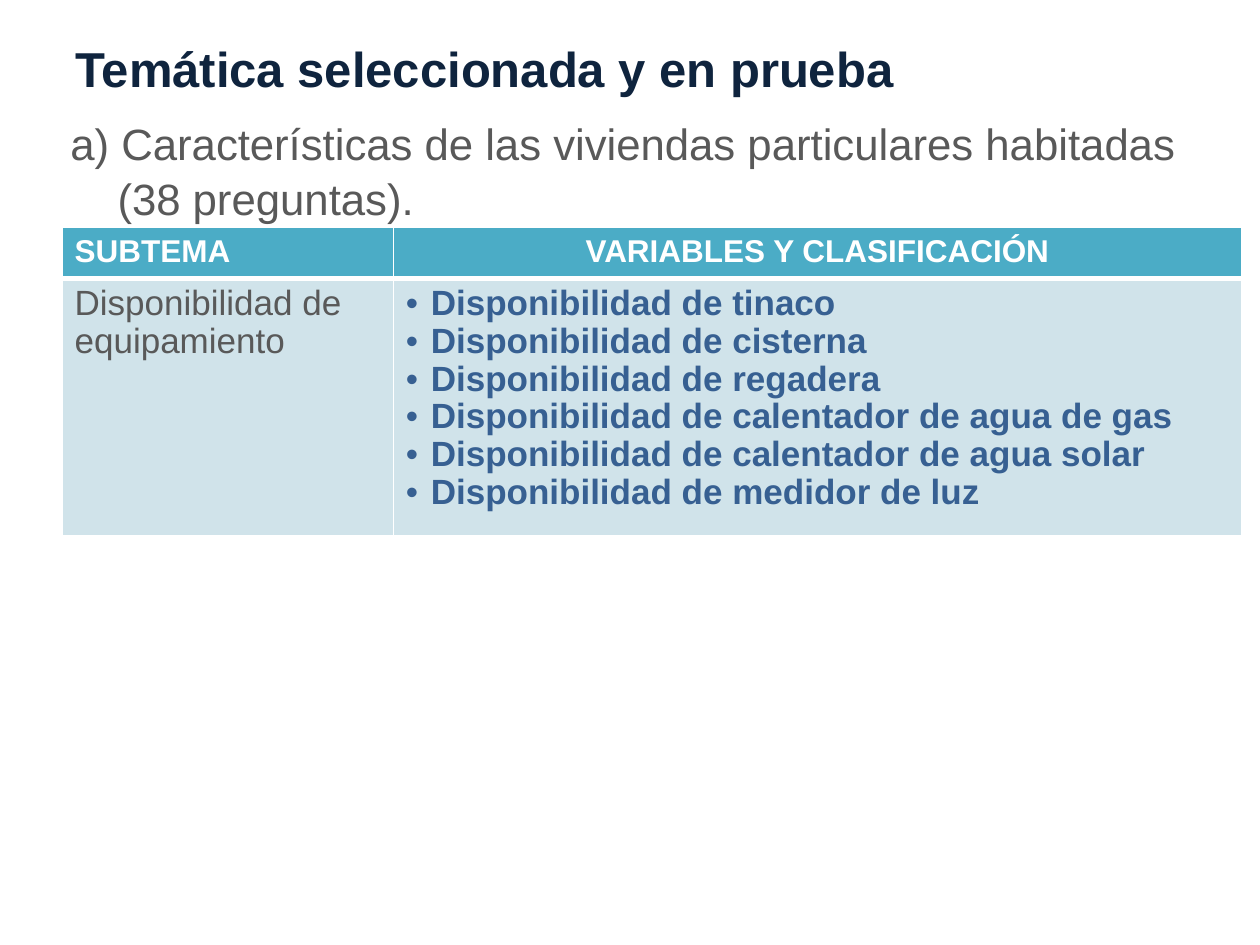
from lxml.etree import SubElement
from pptx import Presentation
from pptx.dml.color import RGBColor
from pptx.enum.text import MSO_ANCHOR as Anchor, PP_ALIGN as Align
from pptx.oxml.ns import qn
from pptx.util import Cm, Pt

EQUIPMENT = ["tinaco", "cisterna", "regadera", "calentador de agua de gas",
             "calentador de agua solar", "medidor de luz"]


def color(value):
    return RGBColor.from_string(value)


def write(paragraph, text, size=20, ink="595959", bold=False, align=Align.LEFT,
          spacing=1.0, hang=0, bullet=None):
    """Fill one paragraph; hang is the hanging indent in cm."""
    props = paragraph._p.get_or_add_pPr()
    props.set("marL", str(Cm(hang)))
    props.set("indent", str(Cm(-hang)))
    if bullet:
        SubElement(props, qn("a:buFont"), typeface="Arial")
        SubElement(props, qn("a:buChar"), char=bullet)
    else:
        SubElement(props, qn("a:buNone"))
    paragraph.alignment = align
    paragraph.line_spacing = spacing
    run = paragraph.add_run()
    run.text = text
    run.font.name = "Arial"
    run.font.size = Pt(size)
    run.font.bold = bold
    run.font.color.rgb = color(ink)


class SlideBuilder:
    navy, blue, white = "0F243E", "376092", "FFFFFF"
    header_fill, body_fill = "4BACC6", "D0E3EA"

    def __init__(self, slide):
        self.slide = slide

    def title(self, text, left, top, width, height):
        heading = self.slide.shapes.title
        heading.left, heading.top = Cm(left), Cm(top)
        heading.width, heading.height = Cm(width), Cm(height)
        heading.text_frame.vertical_anchor = Anchor.TOP
        write(heading.text_frame.paragraphs[0], text, size=28, ink=self.navy,
              bold=True, spacing=1.1)

    def text(self, text, left, top, width, height, **style):
        frame = self.slide.shapes.add_textbox(
            Cm(left), Cm(top), Cm(width), Cm(height)).text_frame
        frame.word_wrap = True
        write(frame.paragraphs[0], text, **style)

    def table(self, left, top, columns, rows):
        grid = self.slide.shapes.add_table(
            len(rows), len(columns), Cm(left), Cm(top),
            Cm(sum(columns)), Cm(sum(rows))).table
        for column, width in zip(grid.columns, columns):
            column.width = Cm(width)
        for row, height in zip(grid.rows, rows):
            row.height = Cm(height)
        return grid

    def cell(self, cell, lines, fill, top_line=1, bottom_line=1, **style):
        frame = cell.text_frame
        for number, line in enumerate(lines):
            paragraph = frame.add_paragraph() if number else frame.paragraphs[0]
            write(paragraph, line, **style)
        props = cell._tc.get_or_add_tcPr()
        borders = {"lnL": 1, "lnR": 1, "lnT": top_line, "lnB": bottom_line}
        for side, width in borders.items():
            border = SubElement(props, qn(f"a:{side}"), w=str(Pt(width)))
            paint = SubElement(border, qn("a:solidFill"))
            SubElement(paint, qn("a:srgbClr"), val=self.white)
        cell.fill.solid()
        cell.fill.fore_color.rgb = color(fill)


def main():
    deck = Presentation()
    deck.slide_width, deck.slide_height = Cm(25.4), Cm(19.05)
    page = SlideBuilder(deck.slides.add_slide(deck.slide_layouts[5]))

    # Title and topic
    page.title("Temática seleccionada y en prueba", 1.27, 0.53, 22.86, 1.2)
    page.text("a) Características de las viviendas particulares habitadas "
              "(38 preguntas).", 1.17, 2.18, 23.04, 2.39,
              size=25, spacing=1.05, hang=0.95)

    # Table of subtopics and variables
    subtopics = page.table(1.25, 4.58, [6.68, 17.1], [1.04, 4.95])
    headings = [("SUBTEMA", Align.LEFT),
                ("VARIABLES Y CLASIFICACIÓN", Align.CENTER)]
    for column, (heading, align) in enumerate(headings):
        page.cell(subtopics.cell(0, column), [heading], page.header_fill,
                  bottom_line=3, size=18, ink=page.white, bold=True, align=align)
    page.cell(subtopics.cell(1, 0), ["Disponibilidad de equipamiento"],
              page.body_fill, top_line=3, spacing=0.97)
    page.cell(subtopics.cell(1, 1),
              [f"Disponibilidad de {item}" for item in EQUIPMENT],
              page.body_fill, top_line=3, ink=page.blue, bold=True,
              spacing=0.97, hang=0.5, bullet="•")

    deck.save("out.pptx")


if __name__ == "__main__":
    main()
